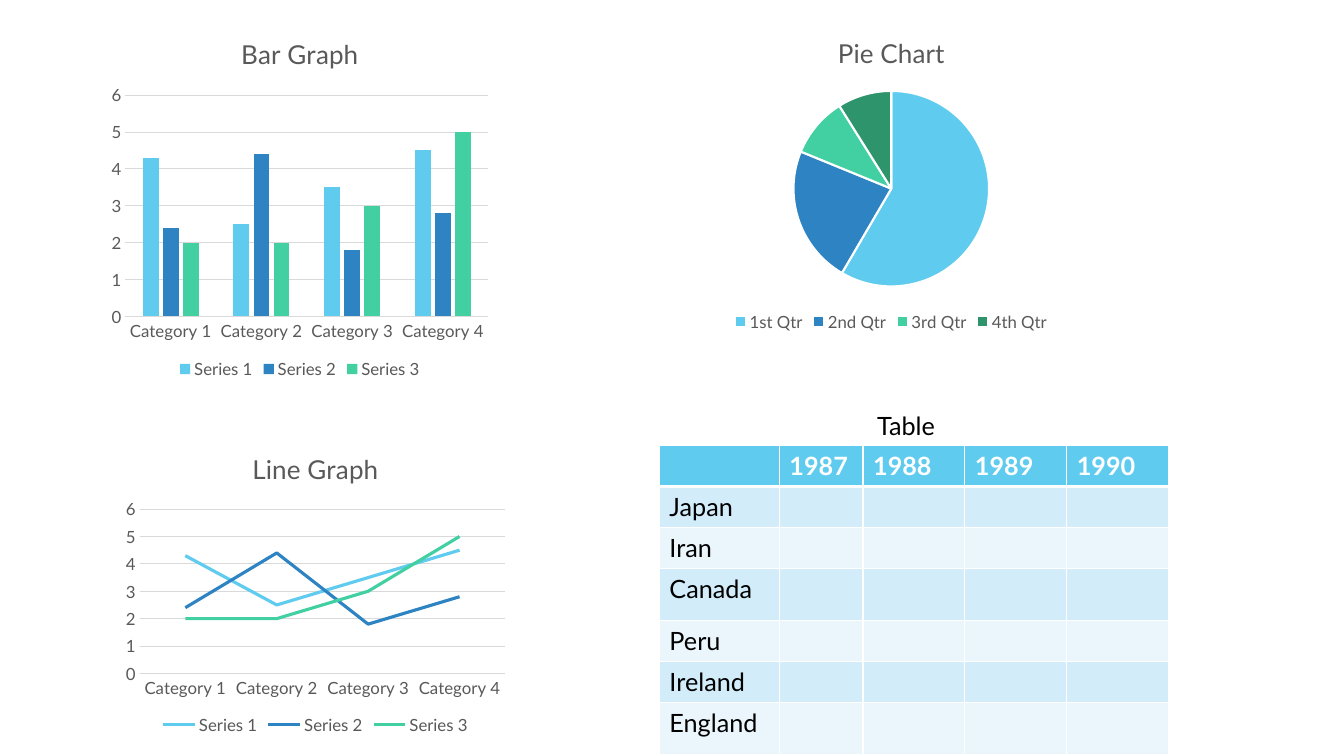
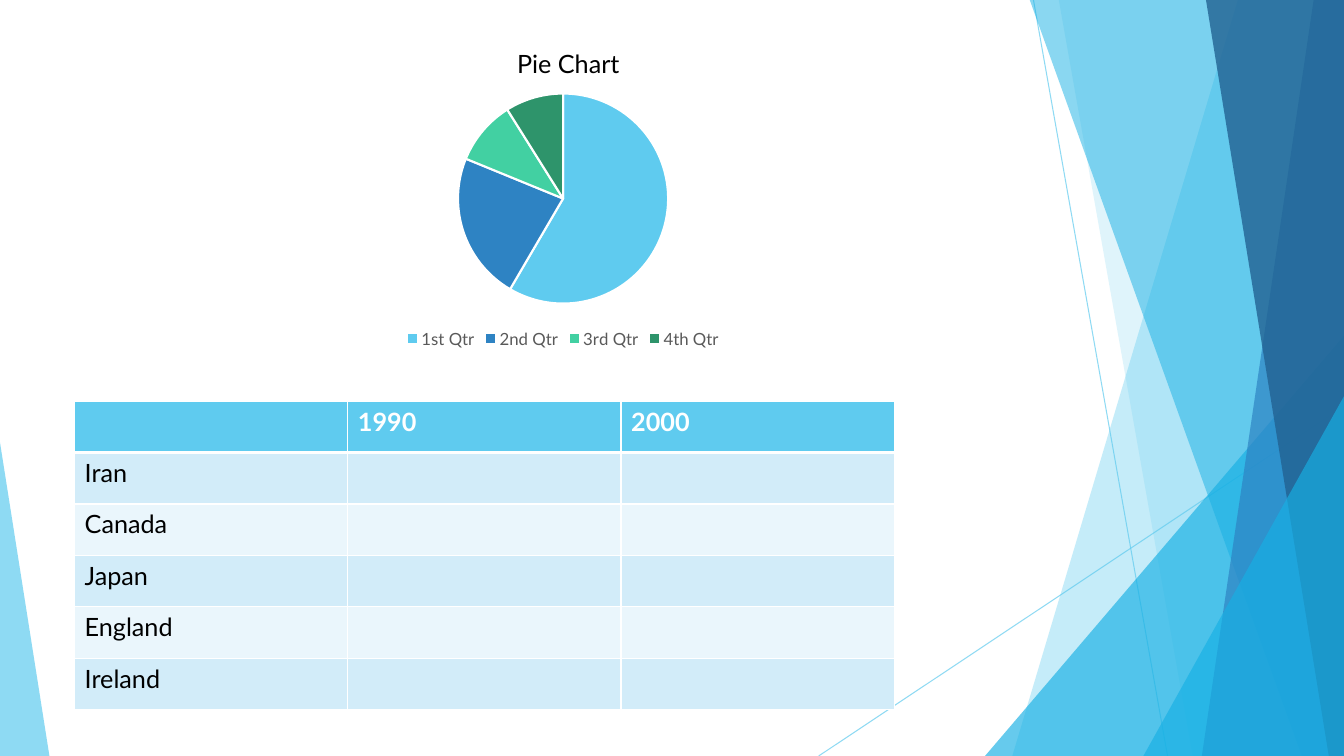
"""Build two slides of sample charts and tables, the second with a faceted backdrop."""
from dataclasses import dataclass
from typing import NamedTuple

from lxml import etree
from pptx import Presentation
from pptx import util as u
from pptx.chart import data as cd
from pptx.dml.color import RGBColor
from pptx.enum import chart as ch, shapes as sh
from pptx.oxml import ns

WIDE, HIGH, TOP = 13.33, 7.5, -0.01
FONT = "Lato"
HUES = {
    "sky": "5FCBEF", "blue": "2E83C3", "mint": "42D0A2", "pine": "2E946B",
    "aqua": "17B0E4", "navy": "226292", "dark": "D2ECF9", "pale": "EAF6FC",
    "grid": "D9D9D9", "gray": "595959", "black": "000000", "white": "FFFFFF",
}
PARTS = ("sky", "blue", "mint", "pine")
KIND = ch.XL_CHART_TYPE


class Box(NamedTuple):
    left: float
    top: float
    width: float
    height: float


@dataclass
class Plot:
    box: Box
    kind: KIND
    cats: list[str]
    rows: list[list[float]]
    title: str = ""


@dataclass
class Grid:
    box: Box
    cols: list[float]
    rows: list[float]
    heads: list[str]
    names: list[str]


@dataclass
class Ray:
    start: tuple[float, float]
    end: tuple[float, float]
    hue: str = "sky"
    alpha: int = 70


@dataclass
class Pane:
    head: float
    foot: float
    hue: str
    alpha: int
    right: float = WIDE


@dataclass
class Spike:
    box: Box
    tip: float
    hue: str
    alpha: int


CATS = [f"Category {n}" for n in range(1, 5)]
ROWS = [[4.3, 2.5, 3.5, 4.5], [2.4, 4.4, 1.8, 2.8], [2, 2, 3, 5]]
QTRS = ["1st Qtr", "2nd Qtr", "3rd Qtr", "4th Qtr"]
SHARES = [[59, 23, 10, 9]]

PLOTS = [
    Plot(Box(1.03, 0.18, 3.89, 3.62), KIND.COLUMN_CLUSTERED, CATS, ROWS, "Bar Graph"),
    Plot(Box(6.28, 0.18, 5.12, 3.15), KIND.PIE, QTRS, SHARES, "Pie Chart"),
    Plot(Box(1.17, 4.31, 3.92, 3.02), KIND.LINE, CATS, ROWS, "Line Graph"),
]
YEARS = Grid(
    Box(6.54, 4.42, 5.05, 3.04), [1.19, 0.83, 1.01, 1.01, 1.01],
    [0.39, 0.39, 0.39, 0.52, 0.39, 0.39, 0.52], ["", "1987", "1988", "1989", "1990"],
    ["Japan", "Iran", "Canada", "Peru", "Ireland", "England"],
)
PIE = Plot(Box(1.4, 0.79, 8.37, 2.71), KIND.PIE, QTRS, SHARES)
SPANS = Grid(
    Box(0.74, 3.98, 8.14, 3.03), [2.71] * 3, [0.51] * 6, ["", "1990", "2000"],
    ["Iran", "Canada", "Japan", "England", "Ireland"],
)
FACETS = [
    Ray((10.25, 0), (11.58, HIGH)),
    Ray((WIDE, 4.03), (8.12, HIGH)),
    Pane(12.28, 10.04, "sky", 36),
    Pane(10.5, 11.83, "sky", 20),
    Spike(Box(9.77, 3.33, 3.56, 4.17), 1, "aqua", 66),
    Pane(10.21, 12.91, "aqua", 50),
    Pane(13.03, 11.92, "blue", 70),
    Pane(11.96, 13.18, "navy", 80),
    Spike(Box(11.34, 3.93, 1.99, 3.57), 1, "aqua", 66),
    Spike(Box(0, 4.39, 0.49, 3.11), 0, "sky", 70),
]


def rgb(hue: str) -> RGBColor:
    """Look up a colour."""
    return RGBColor.from_string(HUES[hue])


def inch(vals) -> list[u.Length]:
    """Turn numbers into lengths."""
    return [u.Inches(val) for val in vals]


def style(font, size: float, hue: str, bold: bool = False) -> None:
    """Set the face, size and colour of a font."""
    font.name, font.size, font.bold = FONT, u.Pt(size), bold
    font.color.rgb = rgb(hue)


def write(frame, text: str, *, size: float = 18, hue: str = "black", bold: bool = False) -> None:
    """Put one formatted run in a text frame."""
    run = frame.paragraphs[0].add_run()
    run.text = text
    style(run.font, size, hue, bold)


def label(slide, box: Box, text: str, wrap: bool) -> None:
    """Add a text box."""
    frame = slide.shapes.add_textbox(*inch(box)).text_frame
    frame.word_wrap = wrap
    write(frame, text)


def paint(fill, hue: str) -> None:
    """Fill with a plain colour."""
    fill.solid()
    fill.fore_color.rgb = rgb(hue)


def stroke(line, hue: str, width: float) -> None:
    """Set the colour and width of a line."""
    line.color.rgb = rgb(hue)
    line.width = u.Pt(width)


def fade(shape, alpha: int) -> None:
    """Make the colours of a shape see-through."""
    for clr in shape._element.spPr.iter(ns.qn("a:srgbClr")):
        etree.SubElement(clr, ns.qn("a:alpha"), val=str(alpha * 1000))


def facet(slide, item: Ray | Pane | Spike) -> None:
    """Draw one part of the backdrop."""
    if isinstance(item, Ray):
        shape = slide.shapes.add_connector(
            sh.MSO_CONNECTOR.STRAIGHT, *inch(item.start + item.end))
        stroke(shape.line, item.hue, 0.75)
        etree.SubElement(shape._element.spPr, ns.qn("a:effectLst"))
    else:
        if isinstance(item, Pane):
            pts = [(item.head, TOP), (item.right, TOP), (item.right, HIGH), (item.foot, HIGH)]
            first, *rest = [tuple(inch(pt)) for pt in pts]
            pen = slide.shapes.build_freeform(*first)
            pen.add_line_segments(rest, close=True)
            shape = pen.convert_to_shape()
        else:
            shape = slide.shapes.add_shape(
                sh.MSO_SHAPE.ISOSCELES_TRIANGLE, *inch(item.box))
            shape.adjustments[0] = item.tip
        shape.shadow.inherit = False
        paint(shape.fill, item.hue)
        shape.line.fill.background()
    fade(shape, item.alpha)


def axes(chart) -> None:
    """Format both axes of a chart."""
    for axis in (chart.category_axis, chart.value_axis):
        axis.major_tick_mark = axis.minor_tick_mark = ch.XL_TICK_MARK.NONE
        style(axis.tick_labels.font, 12, "gray")
    stroke(chart.category_axis.format.line, "grid", 0.75)
    axis = chart.value_axis
    axis.minimum_scale, axis.maximum_scale, axis.major_unit = 0, 6, 1
    axis.format.line.fill.background()
    stroke(axis.major_gridlines.format.line, "grid", 0.75)


def draw(slide, item: Plot) -> None:
    """Add a chart."""
    data = cd.CategoryChartData()
    data.categories = item.cats
    for num, vals in enumerate(item.rows, 1):
        data.add_series(f"Series {num}", vals)
    chart = slide.shapes.add_chart(item.kind, *inch(item.box), data).chart
    style(chart.font, 10, "black")
    chart.has_title = bool(item.title)
    if item.title:
        write(chart.chart_title.text_frame, item.title, size=18.6, hue="gray")
        chart.chart_title.include_in_layout = False
    chart.has_legend = True
    chart.legend.position = ch.XL_LEGEND_POSITION.BOTTOM
    chart.legend.include_in_layout = False
    style(chart.legend.font, 12, "gray")
    plot = chart.plots[0]
    plot.vary_by_categories = item.kind == KIND.PIE
    if item.kind == KIND.PIE:
        for num, hue in enumerate(PARTS):
            look = plot.series[0].points[num].format
            paint(look.fill, hue)
            stroke(look.line, "white", 1.5)
        return
    axes(chart)
    for row, hue in zip(plot.series, PARTS):
        if item.kind == KIND.LINE:
            row.smooth = False
            row.marker.style = ch.XL_MARKER_STYLE.NONE
            stroke(row.format.line, hue, 2.25)
        else:
            paint(row.format.fill, hue)
    if item.kind == KIND.COLUMN_CLUSTERED:
        plot.gap_width, plot.overlap = 219, -27


def edge(cell, top: int, base: int) -> None:
    """Give a cell white borders."""
    props = cell._tc.get_or_add_tcPr()
    for num, (side, width) in enumerate(zip("LRTB", (1, 1, top, base))):
        line = etree.Element(ns.qn(f"a:ln{side}"), w=str(u.Pt(width)))
        fill = etree.SubElement(line, ns.qn("a:solidFill"))
        etree.SubElement(fill, ns.qn("a:srgbClr"), val=HUES["white"])
        props.insert(num, line)


def table(slide, item: Grid) -> None:
    """Add a banded table with a header row."""
    grid = slide.shapes.add_table(len(item.rows), len(item.cols), *inch(item.box)).table
    for col, width in zip(grid.columns, item.cols):
        col.width = u.Inches(width)
    blank = [""] * (len(item.cols) - 1)
    lines = [item.heads] + [[name] + blank for name in item.names]
    for num, (high, texts) in enumerate(zip(item.rows, lines)):
        grid.rows[num].height = u.Inches(high)
        head = num == 0
        for col, text in enumerate(texts):
            cell = grid.cell(num, col)
            paint(cell.fill, "sky" if head else "dark" if num % 2 else "pale")
            edge(cell, 3 if num == 1 else 1, 3 if head else 1)
            if text:
                write(cell.text_frame, text, hue="white" if head else "black", bold=head)


def main() -> None:
    """Build and save the slides."""
    deck = Presentation()
    deck.slide_width, deck.slide_height = inch((WIDE, HIGH))
    one, two = [deck.slides.add_slide(deck.slide_layouts[6]) for _ in range(2)]
    for item in PLOTS:
        draw(one, item)
    table(one, YEARS)
    label(one, Box(8.6, 4.02, 0.88, 0.4), "Table", False)
    for item in FACETS:
        facet(two, item)
    draw(two, PIE)
    table(two, SPANS)
    label(two, Box(5.03, 0.43, 1.82, 0.71), "Pie Chart", True)
    deck.save("out.pptx")


if __name__ == "__main__":
    main()
